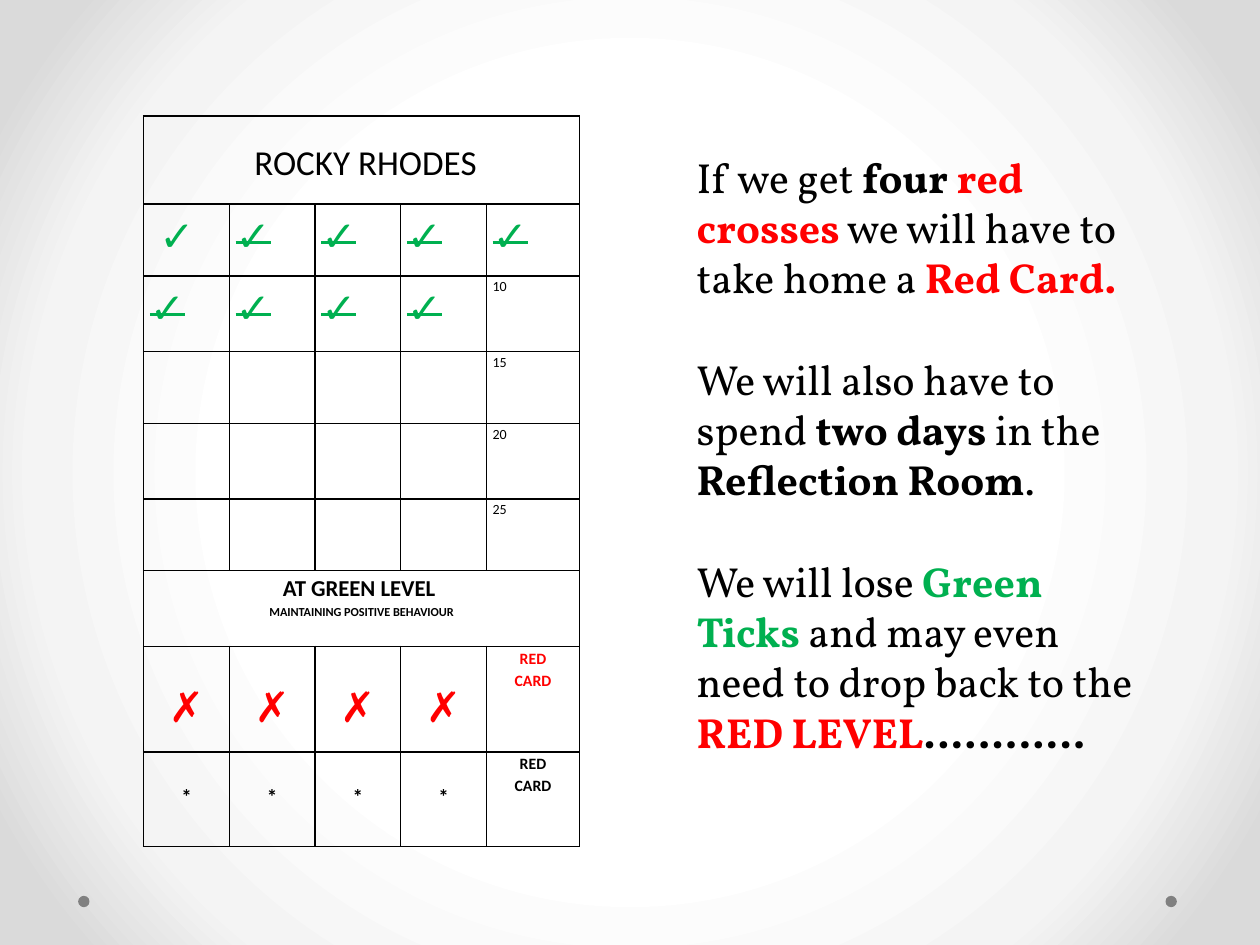
from dataclasses import dataclass

from lxml.etree import SubElement
from pptx import Presentation
from pptx.dml.color import RGBColor
from pptx.enum.shapes import MSO_SHAPE
from pptx.enum.text import PP_ALIGN
from pptx.oxml import parse_xml
from pptx.oxml.ns import nsdecls, qn
from pptx.util import Inches, Pt


@dataclass(frozen=True)
class Theme:
    black: str = "000000"
    red: str = "FF0000"
    green: str = "00B050"
    dot: str = "808080"
    backdrop: tuple = ((50, "FFFFFF"), (76, "F4F4F4"), (92, "DADADA"))
    card_font: str = "Calibri"
    body_font: str = "Vollkorn"
    name: int = 20
    mark: int = 24
    number: int = 8
    level: int = 13
    motto: int = 7
    star: int = 12
    card: int = 9
    body: int = 24
    body_gap: int = 29


T = Theme()


@dataclass(frozen=True)
class Line:
    text: str
    size: int
    color: str = T.black
    bold: bool = False
    strike: bool = False
    centred: bool = True


@dataclass(frozen=True)
class Run:
    text: str
    color: str = T.black
    bold: bool = False


def set_background(s) -> None:
    s.background.fill.solid()
    bg_pr = s.background.fill._xPr
    stops = "".join(f'<a:gs pos="{pos * 1000}"><a:srgbClr val="{color}"/></a:gs>'
                    for pos, color in T.backdrop)
    gradient = parse_xml(
        f'<a:gradFill {nsdecls("a")} rotWithShape="1"><a:gsLst>{stops}</a:gsLst>'
        '<a:path path="circle"><a:fillToRect l="50000" t="50000" r="50000" b="50000"/>'
        '</a:path></a:gradFill>')
    bg_pr.replace(bg_pr.find(qn("a:solidFill")), gradient)


def add_dot(s, left: float) -> None:
    sp = s.shapes.add_shape(MSO_SHAPE.OVAL, Inches(left), Inches(7.11),
                            Inches(0.09), Inches(0.09))
    sp.shadow.inherit = False
    sp.fill.solid()
    sp.fill.fore_color.rgb = RGBColor.from_string(T.dot)
    sp.line.fill.background()


def style_cell(cell) -> None:
    cell.margin_left = cell.margin_right = Inches(0.05)
    cell.margin_top = cell.margin_bottom = 0
    tc_pr = cell._tc.get_or_add_tcPr()
    for side in ("lnL", "lnR", "lnT", "lnB"):
        ln = SubElement(tc_pr, qn(f"a:{side}"), w=str(Pt(1)))
        fill = SubElement(ln, qn("a:solidFill"))
        SubElement(fill, qn("a:srgbClr"), val=T.black)
    cell.fill.background()


def write_cell(cell, lines: list[Line], top: float = 0) -> None:
    cell.margin_top = Inches(top)
    tf = cell.text_frame
    for i, line in enumerate(lines):
        p = tf.add_paragraph() if i else tf.paragraphs[0]
        p.alignment = PP_ALIGN.CENTER if line.centred else PP_ALIGN.LEFT
        p.line_spacing = 1.15
        p.font.name = T.card_font
        p.font.size = Pt(line.size)
        p.font.bold = line.bold
        p.font.color.rgb = RGBColor.from_string(line.color)
        r = p.add_run()
        r.text = line.text
        if line.strike:
            r._r.get_or_add_rPr().set("strike", "sngStrike")


def red_card(color: str) -> list[Line]:
    return [Line(word, T.card, color, bold=True) for word in ("RED", "CARD")]


def add_behaviour_card(s) -> None:
    widths = [0.68] * 4 + [0.74]
    heights = [0.7] + [0.57, 0.6] * 3 + [0.84, 0.75]
    table = s.shapes.add_table(len(heights), len(widths), Inches(1.14), Inches(0.92),
                               Inches(sum(widths)), Inches(sum(heights))).table
    table.first_row = table.horz_banding = False
    for column, width in zip(table.columns, widths):
        column.width = Inches(width)
    for row, height in zip(table.rows, heights):
        row.height = Inches(height)
    for cell in table.iter_cells():
        style_cell(cell)

    # Full-width bands: name and level
    for row in (0, 6):
        table.cell(row, 0).merge(table.cell(row, 4))
    write_cell(table.cell(0, 0), [Line("\u00a0ROCKY RHODES".replace("\u00a0", " "), T.name)], 0.16)
    write_cell(table.cell(6, 0), [
        Line("AT GREEN LEVEL ", T.level, bold=True),
        Line("MAINTAINING POSITIVE BEHAVIOUR", T.motto, bold=True)])

    # Nine green ticks, the first one not struck through
    for i in range(9):
        tick = Line("✓" if i else " ✓", T.mark, T.green, strike=i > 0, centred=False)
        write_cell(table.cell(1 + i // 5, i % 5), [tick])

    # Running totals in the last column
    for row in range(2, 6):
        write_cell(table.cell(row, 4), [Line(str(row * 5), T.number, centred=False)])

    # Red crosses and the spare row below
    for col in range(4):
        write_cell(table.cell(7, col), [Line("✗", T.mark, T.red)], 0.23)
        write_cell(table.cell(8, col), [Line("*", T.star, bold=True)], 0.23)
    write_cell(table.cell(7, 4), red_card(T.red))
    write_cell(table.cell(8, 4), red_card(T.black))


def add_explanation(s, paragraphs: list[list[Run]]) -> None:
    tf = s.shapes.add_textbox(Inches(5.43), Inches(1.15),
                              Inches(3.78), Inches(5.35)).text_frame
    tf.word_wrap = True
    for i, runs in enumerate(paragraphs):
        p = tf.add_paragraph() if i else tf.paragraphs[0]
        p.font.name = T.body_font
        p.font.size = Pt(T.body)
        if i:
            p.space_before = Pt(T.body_gap)
        for run in runs:
            r = p.add_run()
            r.text = run.text
            r.font.bold = run.bold
            r.font.color.rgb = RGBColor.from_string(run.color)


EXPLANATION = [
    [Run("If we get "), Run("four ", bold=True), Run("red crosses", T.red, True),
     Run(" we will have to take home a "), Run("Red Card.", T.red, True)],
    [Run("We will also have to spend "), Run("two days", bold=True), Run(" in the "),
     Run("Reflection Room", bold=True), Run(".")],
    [Run("We will lose "), Run("Green Ticks", T.green, True),
     Run(" and may even need to drop back to the "),
     Run("RED LEVEL", T.red, True), Run("…………", bold=True)],
]


def main() -> None:
    prs = Presentation()
    prs.slide_width, prs.slide_height = Inches(10), Inches(7.5)
    s = prs.slides.add_slide(prs.slide_layouts[6])
    set_background(s)
    for left in (9.25, 0.62):
        add_dot(s, left)
    add_behaviour_card(s)
    add_explanation(s, EXPLANATION)
    prs.save("out.pptx")


if __name__ == "__main__":
    main()
